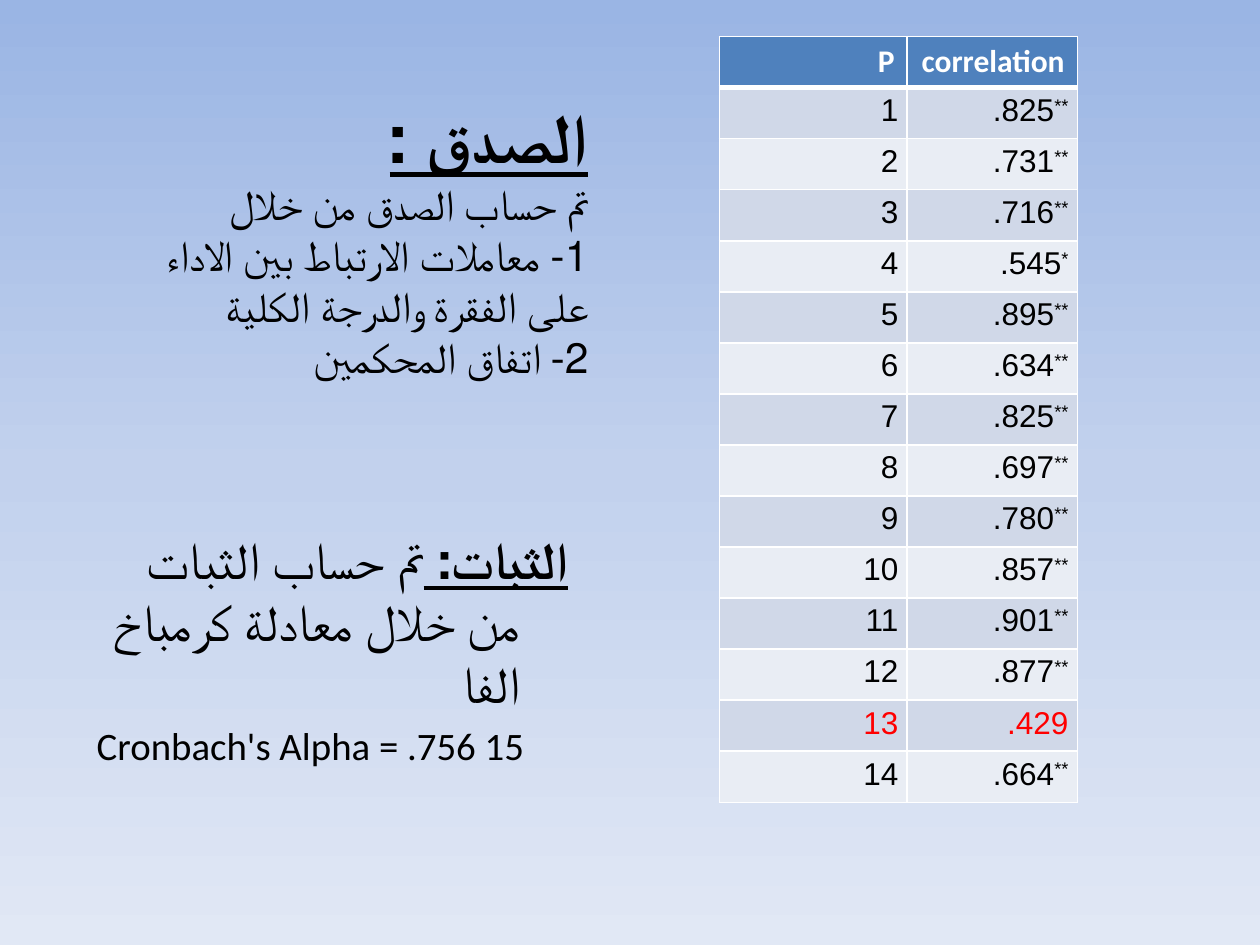
import copy

import pptx
import pptx.dml.color
import pptx.enum.text
import pptx.oxml
import pptx.oxml.ns
import pptx.util

Inches = pptx.util.Inches
Pt = pptx.util.Pt
RGBColor = pptx.dml.color.RGBColor
ALIGN = pptx.enum.text.PP_ALIGN
ANCHOR = pptx.enum.text.MSO_ANCHOR
qn = pptx.oxml.ns.qn

BLACK = RGBColor(0x00, 0x00, 0x00)
WHITE = RGBColor(0xFF, 0xFF, 0xFF)
RED = RGBColor(0xFF, 0x00, 0x00)
HEADER = RGBColor(0x4F, 0x81, 0xBD)
BANDS = (RGBColor(0xD0, 0xD8, 0xE8), RGBColor(0xE9, 0xED, 0xF4))
SKY = (RGBColor(0x9A, 0xB5, 0xE4), RGBColor(0xC2, 0xD1, 0xED),
       RGBColor(0xE1, 0xE8, 0xF5))

HEAD = {"name": "Calibri", "size": Pt(18), "bold": True}
DATA = {"name": "Arial", "size": Pt(18), "bold": False}
CELL = {"margin_left": Inches(0.07), "margin_right": Inches(0.07),
        "margin_top": 0, "margin_bottom": 0}
FRAME = {"word_wrap": True, "auto_size": pptx.enum.text.MSO_AUTO_SIZE.NONE,
         "vertical_anchor": ANCHOR.TOP}

SCORES = (".825**", ".731**", ".716**", ".545*", ".895**", ".634**", ".825**",
          ".697**", ".780**", ".857**", ".901**", ".877**", ".429", ".664**")
WEAK = 13


def style(item, looks):
    for name, value in looks.items():
        setattr(item, name, value)


def text_font(size, strong=False):
    return {"name": "Calibri", "size": Pt(size), "bold": strong,
            "underline": strong}


def add_run(para, text, font, color=BLACK):
    run = para.add_run()
    run.text = text
    style(run.font, font)
    run.font.color.rgb = color
    return run


def set_para(para, align, rtl=False, hang=False):
    para.alignment = align
    props = para._p.get_or_add_pPr()
    if rtl:
        props.set("rtl", "1")
    if hang:
        props.set("marL", str(Inches(0.38)))
        props.set("indent", str(-Inches(0.38)))


def next_para(frame, index):
    return frame.paragraphs[0] if index == 0 else frame.add_paragraph()


def paint_sky(slide):
    fill = slide.background.fill
    fill.gradient()
    fill.gradient_angle = 270
    stops = slide.element.find(".//" + qn("a:gsLst"))
    stops.insert(1, copy.deepcopy(stops[0]))
    for index, (stop, color) in enumerate(zip(fill.gradient_stops, SKY)):
        stop.position = index / 2
        stop.color.rgb = color


def add_title(slide):
    title = slide.shapes.title
    style(title, {"left": Inches(0.83), "top": Inches(0.6),
                  "width": Inches(3.94), "height": Inches(3.07)})
    frame = title.text_frame
    style(frame, FRAME)
    frame.margin_top = Inches(0.15)
    lines = ("الصدق :", "تم حساب الصدق من خلال",
             "1- معاملات الارتباط بين الاداء على الفقرة والدرجة الكلية",
             "2- اتفاق المحكمين")
    for index, line in enumerate(lines):
        para = next_para(frame, index)
        set_para(para, ALIGN.RIGHT, rtl=True)
        font = text_font(24.3) if index else text_font(39.6, True)
        add_run(para, line, font)


def add_body(slide):
    box = slide.shapes.add_textbox(Inches(0.67), Inches(4.14),
                                   Inches(3.94), Inches(1.42))
    frame = box.text_frame
    style(frame, FRAME)
    para = next_para(frame, 0)
    set_para(para, ALIGN.RIGHT, rtl=True, hang=True)
    para.space_before = Pt(6)
    add_run(para, "الثبات: ", text_font(29.6, True))
    add_run(para, "تم حساب الثبات من خلال معادلة كرمباخ الفا", text_font(29.6))
    para = next_para(frame, 1)
    set_para(para, ALIGN.LEFT, hang=True)
    para.space_before = Pt(4.4)
    add_run(para, "Cronbach's Alpha = .756 15", text_font(22.2))


def set_edges(cell, base):
    """Draw white borders, with the bottom one base points wide."""
    props = cell._tc.get_or_add_tcPr()
    widths = {"lnL": 1, "lnR": 1, "lnT": 1, "lnB": base}
    for index, (tag, width) in enumerate(widths.items()):
        line = pptx.oxml.parse_xml(
            f'<a:{tag} {pptx.oxml.ns.nsdecls("a")} w="{Pt(width)}">'
            f'<a:solidFill><a:srgbClr val="{WHITE}"/></a:solidFill></a:{tag}>')
        props.insert(index, line)


def fill_cell(cell, text, row, hang):
    """Write one cell; trailing stars become superscript."""
    cell.fill.solid()
    cell.fill.fore_color.rgb = BANDS[(row - 1) % 2] if row else HEADER
    set_edges(cell, 1 if row else 3)
    para = cell.text_frame.paragraphs[0]
    set_para(para, ALIGN.RIGHT, hang=hang)
    if row == 0:
        add_run(para, text, HEAD, WHITE)
        return
    style(cell, CELL)
    para.line_spacing = 1.15
    value = text.rstrip("*")
    add_run(para, value, DATA, RED if row == WEAK else BLACK)
    if value != text:
        stars = add_run(para, text[len(value):], DATA)
        stars._r.get_or_add_rPr().set("baseline", "30000")


def add_scores(slide):
    rows = [("P", "correlation")]
    rows += [(str(n), score) for n, score in enumerate(SCORES, 1)]
    table = slide.shapes.add_table(len(rows), 2, Inches(5.71), Inches(0.29),
                                   Inches(2.84), Inches(6.08)).table
    for column, width in zip(table.columns, (1.49, 1.35)):
        column.width = Inches(width)
    for row, texts in enumerate(rows):
        for col, text in enumerate(texts):
            fill_cell(table.cell(row, col), text, row, hang=col == 0)


def main():
    deck = pptx.Presentation()
    deck.slide_width, deck.slide_height = Inches(10), Inches(7.5)
    slide = deck.slides.add_slide(deck.slide_layouts[5])
    paint_sky(slide)
    add_title(slide)
    add_scores(slide)
    add_body(slide)
    deck.save("out.pptx")


if __name__ == "__main__":
    main()
